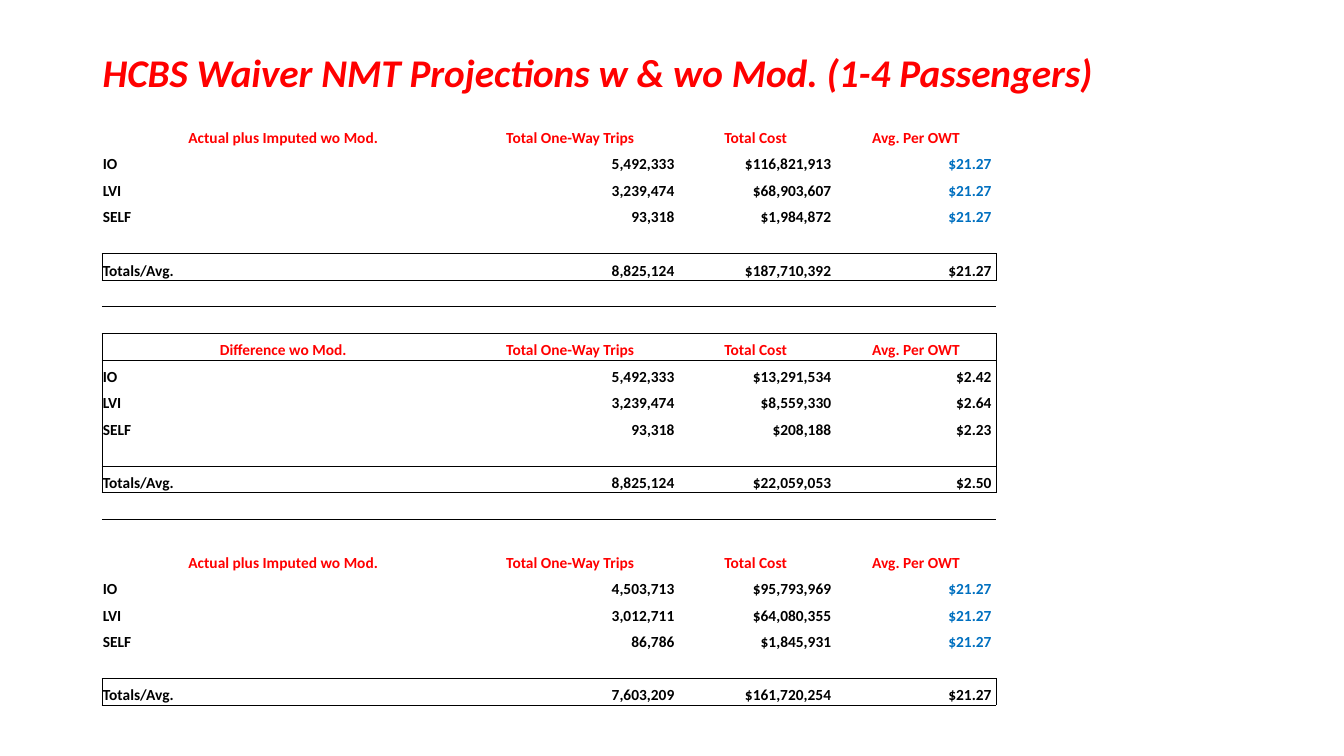
from lxml.etree import SubElement
from pptx import Presentation
from pptx.dml.color import RGBColor
from pptx.enum.text import MSO_ANCHOR, PP_ALIGN
from pptx.oxml.ns import qn
from pptx.util import Inches, Pt

RED, BLACK, BLUE = "FF0000", "000000", "0070C0"
LEFT, TOP, WIDTH, HEIGHT = 1.01, 1.2, 8.87, 5.8
COLUMNS = [3.6, 2.09, 1.59, 1.59]
ROWS, BLOCK_STEP, TOTAL_ROW = 22, 8, 5
NO_GRID_STYLE = "{2D5ABB26-0587-4C30-8999-92F81FD0307C}"

HEADINGS = ["Total One-Way Trips", "Total Cost", "Avg. Per OWT"]
LABELS = ["IO", "LVI", "SELF", "", "Totals/Avg."]
BLOCKS = [
    ("Actual plus Imputed wo Mod.", BLUE, [
        ["5,492,333", "$116,821,913 ", "$21.27 "],
        ["3,239,474", "$68,903,607 ", "$21.27 "],
        ["93,318", "$1,984,872 ", "$21.27 "],
        ["", "", ""],
        ["8,825,124", "$187,710,392 ", "$21.27 "]]),
    ("Difference wo Mod.", BLACK, [
        ["5,492,333", "$13,291,534 ", "$2.42 "],
        ["3,239,474", "$8,559,330 ", "$2.64 "],
        ["93,318", "$208,188 ", "$2.23 "],
        ["", "", ""],
        ["8,825,124", "$22,059,053 ", "$2.50 "]]),
    ("Actual plus Imputed wo Mod.", BLUE, [
        ["4,503,713", "$95,793,969 ", "$21.27 "],
        ["3,012,711", "$64,080,355 ", "$21.27 "],
        ["86,786", "$1,845,931 ", "$21.27 "],
        ["", "", ""],
        ["7,603,209", "$161,720,254 ", "$21.27 "]]),
]
BOXES = [(5, 5), (8, 13), (13, 13), (21, 21)]


def style(p, size, color):
    p.font.name = "Calibri"
    p.font.size = Pt(size)
    p.font.bold = True
    p.font.color.rgb = RGBColor.from_string(color)


def add_borders(cell, sides):
    tcPr = cell._tc.get_or_add_tcPr()
    for i, side in enumerate(sides):
        ln = SubElement(tcPr, qn(f"a:ln{side}"), w=str(Pt(0.5)))
        fill = SubElement(ln, qn("a:solidFill"))
        SubElement(fill, qn("a:srgbClr"), val=BLACK)
        tcPr.insert(i, ln)


prs = Presentation()
prs.slide_width, prs.slide_height = Inches(13.33), Inches(7.5)
s = prs.slides.add_slide(prs.slide_layouts[6])

title = s.shapes.add_textbox(Inches(0.92), Inches(0.4), Inches(11.5), Inches(0.68))
tf = title.text_frame
tf.word_wrap = True
tf.vertical_anchor = MSO_ANCHOR.MIDDLE
p = tf.paragraphs[0]
p.text = "HCBS Waiver NMT Projections w & wo Mod. (1-4 Passengers)"
p.line_spacing = 0.9
style(p, 28, RED)
p.font.italic = True

table = s.shapes.add_table(ROWS, len(COLUMNS), Inches(LEFT), Inches(TOP),
                           Inches(WIDTH), Inches(HEIGHT)).table
table.first_row = table.horz_banding = False
table._tbl.tblPr.find(qn("a:tableStyleId")).text = NO_GRID_STYLE
for column, width in zip(table.columns, COLUMNS):
    column.width = Inches(width)
for row in table.rows:
    row.height = Inches(HEIGHT / ROWS)

for cell in table.iter_cells():
    cell.fill.background()
    cell.vertical_anchor = MSO_ANCHOR.BOTTOM
    cell.margin_left = cell.margin_right = cell.margin_top = Inches(0.01)
    cell.margin_bottom = 0
    style(cell.text_frame.paragraphs[0], 11, BLACK)

for b, (name, rate_color, values) in enumerate(BLOCKS):
    lines = [[name] + HEADINGS] + [[label] + v for label, v in zip(LABELS, values)]
    for r, line in enumerate(lines):
        for c, text in enumerate(line):
            if not text:
                continue
            p = table.cell(b * BLOCK_STEP + r, c).text_frame.paragraphs[0]
            p.text = text
            if r == 0:
                p.alignment = PP_ALIGN.CENTER
                style(p, 11, RED)
            elif c > 0:
                p.alignment = PP_ALIGN.RIGHT
                if c == 3 and r < TOTAL_ROW:
                    style(p, 11, rate_color)

last = len(COLUMNS) - 1
for r in range(ROWS):
    for c in range(len(COLUMNS)):
        inside = [box for box in BOXES if box[0] <= r <= box[1]]
        edges = {
            "L": inside and c == 0,
            "R": inside and c == last,
            "T": any(r in (first, end + 1) for first, end in BOXES),
            "B": any(r in (first - 1, end) for first, end in BOXES),
        }
        add_borders(table.cell(r, c), [side for side, on in edges.items() if on])

prs.save("out.pptx")
